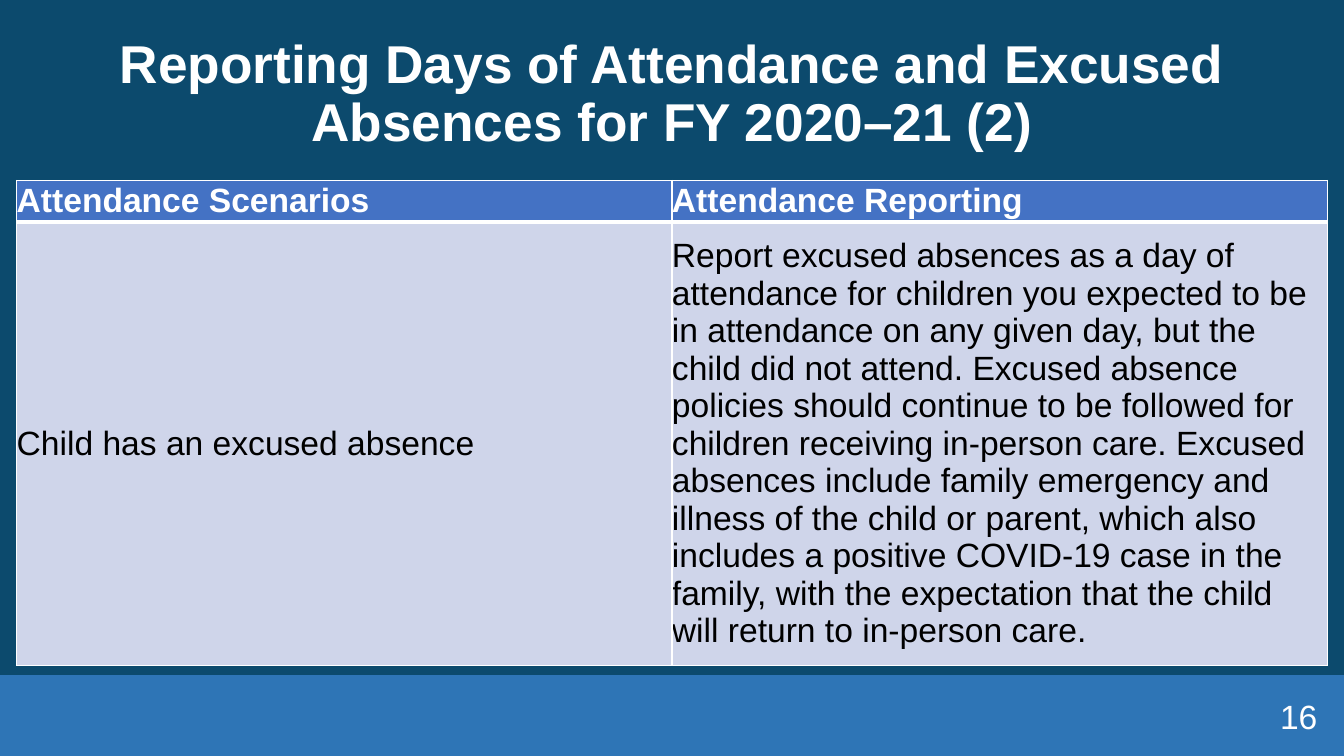
from lxml.etree import SubElement
from pptx import Presentation
from pptx.dml.color import RGBColor
from pptx.enum.shapes import MSO_SHAPE as Shape
from pptx.enum.text import MSO_ANCHOR as Anchor, PP_ALIGN as Align
from pptx.oxml.ns import qn
from pptx.util import Cm, Pt

# Content
TITLE = "Reporting Days of Attendance and Excused Absences for FY 2020–21 (2)"
PAGE_NUMBER = "16"
ROWS = [
    ("Attendance Scenarios", "Attendance Reporting"),
    ("Child has an excused absence",
     "Report excused absences as a day of attendance for children you expected "
     "to be in attendance on any given day, but the child did not attend. "
     "Excused absence policies should continue to be followed for children "
     "receiving in-person care. Excused absences include family emergency and "
     "illness of the child or parent, which also includes a positive COVID-19 "
     "case in the family, with the expectation that the child will return to "
     "in-person care."),
]

# Style and layout, lengths in centimetres
COLORS = {"background": "0C4A6D", "footer": "2E75B6", "header": "4472C4",
          "body": "CFD5EA", "white": "FFFFFF", "black": "000000"}
FONT = "Arial"
WIDTH, HEIGHT = 33.87, 19.05
FOOTER_HEIGHT = 2.04
MARGIN = 0.42
CONTENT_WIDTH = WIDTH - 2 * MARGIN
TABLE_TOP = 4.55
ROW_HEIGHTS = (1.04, 10.36)


def color(name):
    return RGBColor.from_string(COLORS[name])


def style_text(frame, size, name, bold=False, align=Align.LEFT):
    for para in frame.paragraphs:
        para.alignment = align
        for span in para.runs:
            span.font.name = FONT
            span.font.size = Pt(size)
            span.font.bold = bold
            span.font.color.rgb = color(name)


def add_text(page, text, left, top, width, height, size, bold, align):
    frame = page.shapes.add_textbox(Cm(left), Cm(top), Cm(width), Cm(height)).text_frame
    frame.word_wrap = True
    frame.vertical_anchor = Anchor.MIDDLE
    frame.text = text
    style_text(frame, size, "white", bold, align)
    return frame


def set_borders(cell, widths):
    properties = cell._tc.get_or_add_tcPr()
    for index, (side, width) in enumerate(widths.items()):
        line = SubElement(properties, qn(f"a:ln{side}"), w=str(Pt(width)))
        fill = SubElement(line, qn("a:solidFill"))
        SubElement(fill, qn("a:srgbClr"), val=COLORS["white"])
        properties.insert(index, line)


def add_attendance_table(page):
    table = page.shapes.add_table(
        len(ROWS), len(ROWS[0]), Cm(MARGIN), Cm(TABLE_TOP),
        Cm(CONTENT_WIDTH), Cm(sum(ROW_HEIGHTS))).table
    for column in table.columns:
        column.width = Cm(CONTENT_WIDTH / len(ROWS[0]))
    for r, (texts, height) in enumerate(zip(ROWS, ROW_HEIGHTS)):
        table.rows[r].height = Cm(height)
        is_header = r == 0
        for c, text in enumerate(texts):
            cell = table.cell(r, c)
            cell.margin_left = cell.margin_right = cell.margin_top = cell.margin_bottom = 0
            cell.vertical_anchor = Anchor.MIDDLE
            cell.text_frame.text = text
            style_text(cell.text_frame, 24, "white" if is_header else "black", is_header)
            cell.fill.solid()
            cell.fill.fore_color.rgb = color("header" if is_header else "body")
            set_borders(cell, {"L": 1, "R": 1, "T": 1 if is_header else 3,
                               "B": 3 if is_header else 1})


def main():
    deck = Presentation()
    deck.slide_width, deck.slide_height = Cm(WIDTH), Cm(HEIGHT)
    page = deck.slides.add_slide(deck.slide_layouts[6])
    page.background.fill.solid()
    page.background.fill.fore_color.rgb = color("background")

    # Footer band
    band = page.shapes.add_shape(Shape.RECTANGLE, 0, Cm(HEIGHT - FOOTER_HEIGHT),
                                 Cm(WIDTH), Cm(FOOTER_HEIGHT))
    band.shadow.inherit = False
    band.fill.solid()
    band.fill.fore_color.rgb = color("footer")
    band.line.fill.background()

    # Title, table and page number
    title = add_text(page, TITLE, MARGIN, 0.56, CONTENT_WIDTH, 3.68, 38, True, Align.CENTER)
    title.paragraphs[0].line_spacing = 0.9
    add_attendance_table(page)
    add_text(page, PAGE_NUMBER, WIDTH - MARGIN - 7.62, 17.53, 7.62, 1.02,
             24, False, Align.RIGHT)

    deck.save("out.pptx")


if __name__ == "__main__":
    main()
